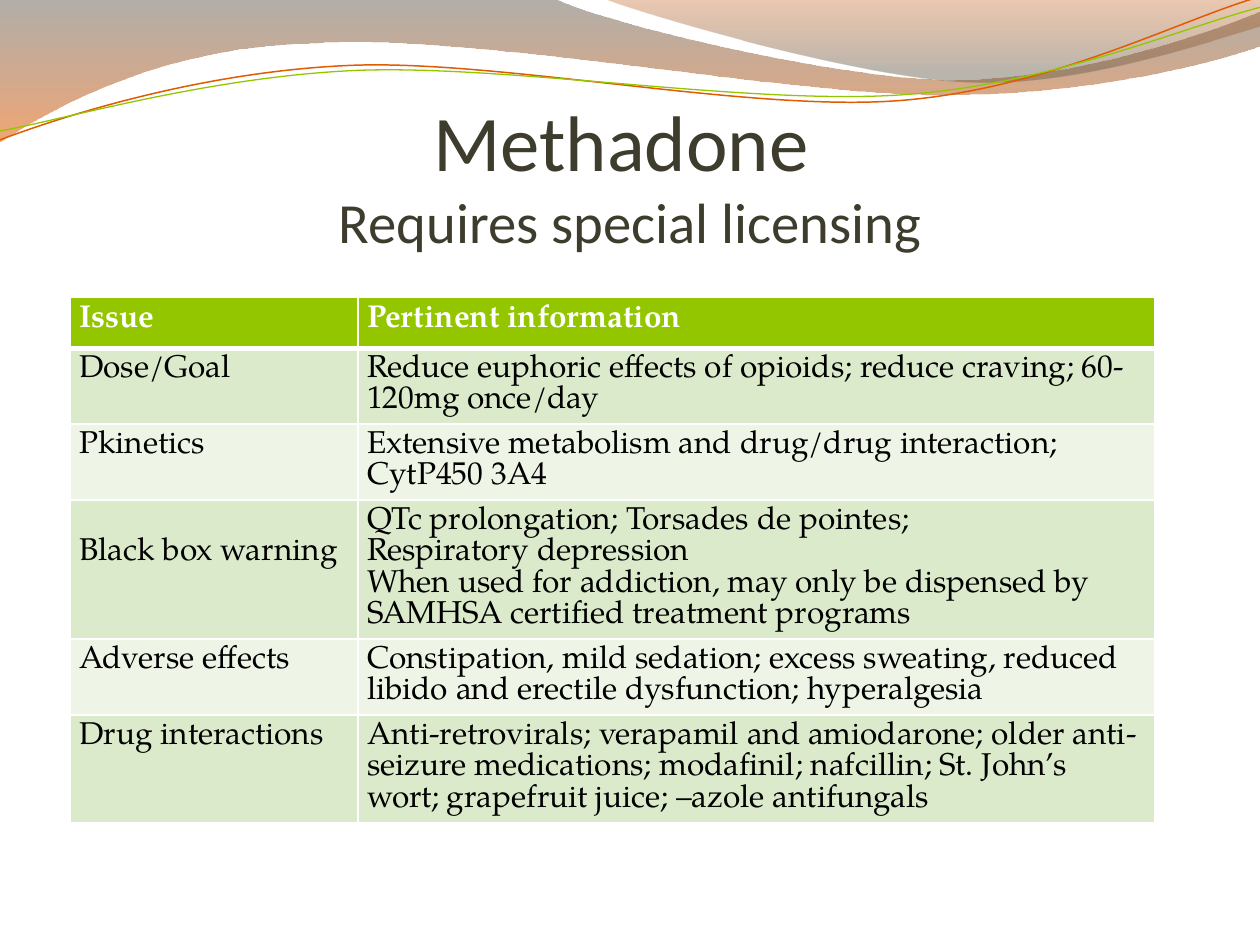
from lxml import etree
from pptx import Presentation
from pptx.dml.color import RGBColor
from pptx.enum.text import MSO_ANCHOR, PP_ALIGN
from pptx.oxml.ns import qn
from pptx.util import Cm, Pt

BOTTOM = MSO_ANCHOR.BOTTOM
CENTER = PP_ALIGN.CENTER

WHITE = RGBColor(0xFF, 0xFF, 0xFF)
BLACK = RGBColor(0x00, 0x00, 0x00)
OLIVE = RGBColor(0x3E, 0x3D, 0x2D)
GREEN = RGBColor(0x94, 0xC6, 0x00)
ORANGE = RGBColor(0xE1, 0x5B, 0x00)
BRIGHT_ORANGE = RGBColor(0xE7, 0x5D, 0x00)
DARK_ORANGE = RGBColor(0xBD, 0x4C, 0x00)
BROWN = RGBColor(0x55, 0x4D, 0x41)
TAUPE = RGBColor(0x68, 0x5D, 0x4B)
BAND_DARK = RGBColor(0xDC, 0xEA, 0xCC)
BAND_LIGHT = RGBColor(0xEE, 0xF5, 0xE7)


def write(paragraph, text, font, size, color, bold=False):
    run = paragraph.add_run()
    run.text = text
    run.font.name = font
    run.font.size = Pt(size)
    run.font.color.rgb = color
    run.font.bold = bold


def draw_wave(shapes, start, segments, close):
    """One-point segments are straight, three-point segments are Bezier curves (cm)."""
    points = [(x * 100, y * 100) for segment in segments for x, y in segment]
    builder = shapes.build_freeform(start[0] * 100, start[1] * 100, scale=Cm(0.01))
    builder.add_line_segments(points, close=close)
    wave = builder.convert_to_shape()
    wave.shadow.inherit = False
    # Join the three points of each curve into one Bezier segment
    steps = iter(list(wave.element.spPr.iter(qn("a:lnTo"))))
    for segment in segments:
        first, *others = [next(steps) for _ in segment]
        if others:
            first.tag = qn("a:cubicBezTo")
        for other in others:
            first.append(other[0])
            other.getparent().remove(other)
    return wave


prs = Presentation()
prs.slide_width = Cm(25.4)
prs.slide_height = Cm(19.05)
slide = prs.slides.add_slide(prs.slide_layouts[6])
shapes = slide.shapes

# Translucent bands: start, segments, gradient stops (position, colour, opacity %)
bands = [
    ((0, 0),
     [[(11.18, -0.03)],
      [(12.09, 0.43), (16.87, 1.6), (19.25, 1.6)],
      [(21.67, 1.6), (24.33, 0.66), (25.4, 0.23)],
      [(25.43, 0.91)],
      [(24.97, 1.12), (22.1, 1.93), (18.95, 1.91)],
      [(15.79, 1.91), (9.7, 0.71), (6.53, 0.86)],
      [(3.28, 0.91), (1.17, 2.11), (-0.03, 2.87)]],
     [(0, BROWN, 45), (1, BRIGHT_ORANGE, 55)]),
    ((12.17, -0.03),
     [[(12.93, 0.28), (17.32, 1.57), (19.53, 1.65)],
      [(21.74, 1.75), (24.41, 0.81), (25.4, 0.53)],
      [(25.4, 0)]],
     [(0, DARK_ORANGE, 30), (0.8, TAUPE, 45)]),
]
for start, segments, stops in bands:
    band = draw_wave(shapes, start, segments, close=True)
    band.line.fill.background()
    band.fill.gradient()
    band.fill.gradient_angle = 270
    for stop, (position, color, opacity) in zip(band.fill.gradient_stops, stops):
        stop.position = position
        stop.color.rgb = color
    for color_xml, (_, _, opacity) in zip(band.element.spPr.iter(qn("a:srgbClr")), stops):
        etree.SubElement(color_xml, qn("a:alpha"), val=str(opacity * 1000))

# Thin wave lines: start, segments, colour, width
wave_lines = [
    ((0, 2.82),
     [[(1.22, 2.36), (4.01, 1.45), (7.04, 1.32)],
      [(10.03, 1.19), (15.06, 2.26), (18.11, 2.03)],
      [(21.16, 1.8), (23.83, 0.38), (25.35, -0.05)]],
     ORANGE, 0.85),
    ((0, 2.64),
     [[(1.19, 2.44), (4.17, 1.55), (7.19, 1.42)],
      [(10.24, 1.3), (15.16, 2.13), (18.21, 1.91)],
      [(21.23, 1.7), (23.9, 0.53), (25.4, 0.15)]],
     GREEN, 0.75),
]
for start, segments, color, width in wave_lines:
    wave_line = draw_wave(shapes, start, segments, close=False)
    wave_line.fill.background()
    wave_line.line.color.rgb = color
    wave_line.line.width = Pt(width)

# Title
title = shapes.add_textbox(Cm(1.27), Cm(1.96), Cm(22.86), Cm(3.18)).text_frame
title.word_wrap = True
title.vertical_anchor = BOTTOM
title.margin_left = title.margin_right = title.margin_bottom = 0
heading = title.paragraphs[0]
heading.alignment = CENTER
write(heading, "Methadone ", font="Calibri", size=45, color=OLIVE)
heading.add_line_break()
write(heading, "Requires special licensing", font="Calibri", size=32.4, color=OLIVE)

# Table of issues: row height in cm, label, information (one paragraph a line)
issues = [
    (1.02, "Issue", "Pertinent information"),
    (1.53, "Dose/Goal", "Reduce euphoric effects of opioids; reduce craving; 60-120mg once/day"),
    (1.53, "Pkinetics", "Extensive metabolism and drug/drug interaction; CytP450 3A4"),
    (2.8, "Black box warning",
     "QTc prolongation; Torsades de pointes;\nRespiratory depression\n"
     "When used for addiction, may only be dispensed by SAMHSA certified treatment programs"),
    (1.53, "Adverse effects",
     "Constipation, mild sedation; excess sweating, reduced libido and erectile "
     "dysfunction; hyperalgesia"),
    (2.16, "Drug interactions",
     "Anti-retrovirals; verapamil and amiodarone; older anti-seizure medications; "
     "modafinil; nafcillin; St. John’s wort; grapefruit juice; –azole antifungals"),
]
table_height = Cm(sum(height for height, *_ in issues))
table = shapes.add_table(len(issues), 2, Cm(1.42), Cm(6), Cm(21.85), table_height).table
table.columns[0].width = Cm(5.8)
table.columns[1].width = Cm(16.05)

for row, (height, *texts) in enumerate(issues):
    table.rows[row].height = Cm(height)
    is_header = row == 0
    fill_color = GREEN if is_header else BAND_DARK if row % 2 else BAND_LIGHT
    borders = {"lnL": 1, "lnR": 1, "lnT": 3 if row == 1 else 1, "lnB": 3 if is_header else 1}
    for column, text in enumerate(texts):
        cell = table.cell(row, column)
        cell.margin_left = cell.margin_right = Cm(0.18)
        cell.margin_top = cell.margin_bottom = Cm(0.13)
        for number, line in enumerate(text.split("\n")):
            frame = cell.text_frame
            paragraph = frame.add_paragraph() if number else frame.paragraphs[0]
            paragraph.line_spacing = Pt(18)
            write(paragraph, line, font="TeX Gyre Pagella", size=18,
                  color=WHITE if is_header else BLACK, bold=is_header)

        # White cell borders
        cell_properties = cell._tc.get_or_add_tcPr()
        for side, width in borders.items():
            border = etree.SubElement(cell_properties, qn(f"a:{side}"), w=str(Pt(width)))
            border_fill = etree.SubElement(border, qn("a:solidFill"))
            etree.SubElement(border_fill, qn("a:srgbClr"), val=str(WHITE))
        cell.fill.solid()
        cell.fill.fore_color.rgb = fill_color

# The warning label sits one line lower than the other labels
table.cell(3, 0).margin_top = Cm(0.76)

prs.save("out.pptx")
